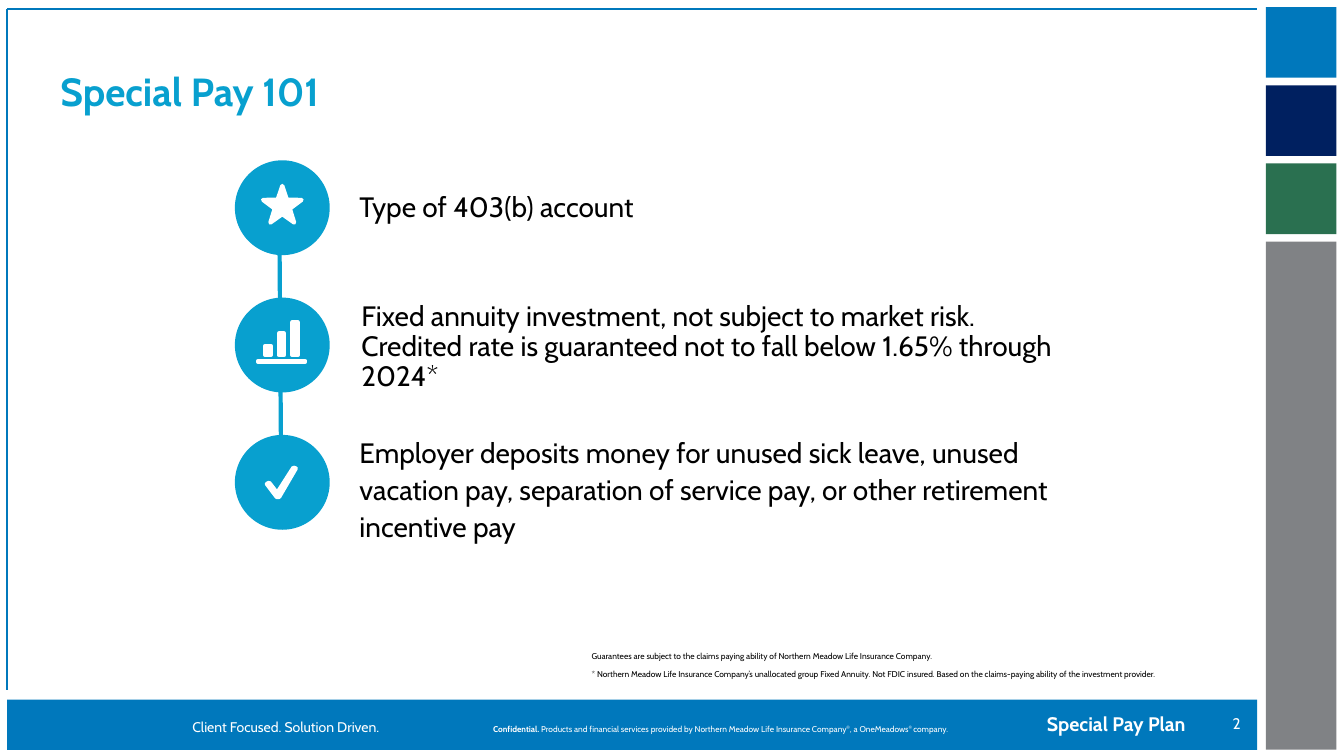
from math import cos, pi, sin

from lxml.etree import SubElement
from pptx import Presentation
from pptx.dml.color import RGBColor
from pptx.enum.shapes import MSO_CONNECTOR, MSO_SHAPE
from pptx.enum.text import MSO_ANCHOR, PP_ALIGN
from pptx.oxml.ns import qn
from pptx.util import Cm, Pt

COLORS = {
    "blue": "0078BC",
    "navy": "002060",
    "green": "2A7050",
    "gray": "808285",
    "cyan": "08A0CF",
    "white": "FFFFFF",
    "black": "000000",
}


class SlideBuilder:
    font_name = "Cabin"

    def __init__(self, slide):
        self.slide = slide

    def color(self, name):
        return RGBColor.from_string(COLORS[name])

    def block(self, preset, left, top, width, height, color):
        shape = self.slide.shapes.add_shape(preset, Cm(left), Cm(top), Cm(width), Cm(height))
        shape.shadow.inherit = False
        shape.fill.solid()
        shape.fill.fore_color.rgb = self.color(color)
        shape.line.fill.background()

    def line(self, start, end, color, width):
        connector = self.slide.shapes.add_connector(
            MSO_CONNECTOR.STRAIGHT, *(Cm(value) for value in start + end))
        connector.line.color.rgb = self.color(color)
        connector.line.width = Pt(width)
        SubElement(connector._element.spPr, qn("a:effectLst"))

    def icon(self, center, contours):
        outlines = [[(Cm(center[0] + x), Cm(center[1] + y)) for x, y in contour]
                    for contour in contours]
        builder = self.slide.shapes.build_freeform(*outlines[0][0])
        builder.add_line_segments(outlines[0][1:])
        for outline in outlines[1:]:
            builder.move_to(*outline[0])
            builder.add_line_segments(outline[1:])
        shape = builder.convert_to_shape()
        shape.shadow.inherit = False
        shape.fill.solid()
        shape.fill.fore_color.rgb = self.color("white")
        shape.line.color.rgb = self.color("white")
        shape.line.width = Pt(3)
        SubElement(shape.line._get_or_add_ln(), qn("a:round"))

    def fill_text(self, shape, paragraphs, size, color, bold=False, align=PP_ALIGN.LEFT,
                  anchor=MSO_ANCHOR.TOP, spacing=1.0, gap=0):
        frame = shape.text_frame
        frame.word_wrap = True
        frame.vertical_anchor = anchor
        for index, runs in enumerate(paragraphs):
            paragraph = frame.add_paragraph() if index else frame.paragraphs[0]
            paragraph.alignment = align
            paragraph.line_spacing = spacing
            paragraph.space_before = Pt(gap if index else 0)
            for text, style in runs:
                run = paragraph.add_run()
                run.text = text
                run.font.name = self.font_name
                run.font.size = Pt(size)
                run.font.bold = bold or style == "bold"
                run.font.color.rgb = self.color(color)
                if style == "superscript":
                    run._r.get_or_add_rPr().set("baseline", "30000")

    def text(self, left, top, width, height, paragraphs, size, color, **options):
        shape = self.slide.shapes.add_textbox(Cm(left), Cm(top), Cm(width), Cm(height))
        self.fill_text(shape, paragraphs, size, color, **options)

    def title(self, left, top, width, height, text):
        shape = self.slide.shapes.title
        shape.left, shape.top, shape.width, shape.height = (
            Cm(left), Cm(top), Cm(width), Cm(height))
        self.fill_text(shape, [[(text, "")]], 28, "cyan", bold=True,
                       anchor=MSO_ANCHOR.BOTTOM, spacing=0.9)


def rectangle(left, top, right, bottom):
    return [(left, top), (right, top), (right, bottom), (left, bottom), (left, top)]


def star():
    radii = (0.51, 0.2)
    return [(radii[step % 2] * sin(step * pi / 5),
             -0.04 - radii[step % 2] * cos(step * pi / 5)) for step in range(11)]


def bar_chart():
    bars = [rectangle(-0.43 + 0.34 * index, top, -0.29 + 0.34 * index, 0.25)
            for index, top in enumerate((0.02, -0.29, -0.57))]
    return [rectangle(-0.61, 0.4, 0.58, 0.42)] + bars


def check_mark():
    return [(-0.39, 0.04), (-0.33, 0.01), (-0.13, 0.27), (0.28, -0.37),
            (0.34, -0.35), (-0.08, 0.37), (-0.14, 0.37), (-0.39, 0.04)]


def add_frame(builder):
    builder.block(MSO_SHAPE.RECTANGLE, 0.18, 17.63, 31.5, 1.27, "blue")
    tiles = (("blue", 1.78), ("navy", 1.78), ("green", 1.78), ("gray", 12.8))
    for index, (color, height) in enumerate(tiles):
        builder.block(MSO_SHAPE.RECTANGLE, 31.9, 0.18 + 1.97 * index, 1.78, height, color)
    builder.line((0.18, 0.23), (31.67, 0.23), "blue", 1)
    builder.line((0.18, 0.23), (0.18, 17.4), "blue", 1)


def add_footer(builder):
    builder.text(4.6, 17.98, 5.87, 0.69, [[("Client Focused. Solution Driven.", "")]], 10, "white")
    builder.text(14.1, 17.81, 16.03, 0.86, [[("Special Pay Plan", "")]], 14, "white",
                 bold=True, align=PP_ALIGN.RIGHT, anchor=MSO_ANCHOR.MIDDLE)
    confidential = [
        ("Confidential. ", "bold"),
        ("Products and financial services provided by Northern Meadow Life Insurance Company", ""),
        ("®", "superscript"),
        (", a OneMeadows", ""),
        ("® ", "superscript"),
        ("company.", ""),
    ]
    builder.text(11.53, 18.11, 13.26, 0.51, [confidential], 6, "white", align=PP_ALIGN.CENTER)
    builder.text(30, 17.73, 1.52, 1.02, [[("2", "")]], 11, "white",
                 align=PP_ALIGN.RIGHT, anchor=MSO_ANCHOR.MIDDLE)


def add_facts(builder):
    facts = (
        (star(), (8.81, 4.75, 13.79, 0.94), 0.9, "Type of 403(b) account"),
        (bar_chart(), (8.86, 7.49, 18.59, 2.39), 0.9,
         "Fixed annuity investment, not subject to market risk. "
         "Credited rate is guaranteed not to fall below 1.65% through 2024*"),
        (check_mark(), (8.81, 10.77, 18.64, 2.95), 1.1,
         "Employer deposits money for unused sick leave, unused vacation pay, "
         "separation of service pay, or other retirement incentive pay"),
    )
    diameter = 2.39
    builder.line((7.04, 5.56), (7.09, 12.6), "cyan", 3)
    for index, (symbol, box, spacing, text) in enumerate(facts):
        top = 4.04 + 3.46 * index
        builder.block(MSO_SHAPE.OVAL, 5.92, top, diameter, diameter, "cyan")
        contours = symbol if index == 1 else [symbol]
        builder.icon((5.92 + diameter / 2, top + diameter / 2), contours)
        builder.text(*box, [[(text, "")]], 20, "black", spacing=spacing)


def main():
    presentation = Presentation()
    presentation.slide_width, presentation.slide_height = Cm(33.87), Cm(19.05)
    builder = SlideBuilder(presentation.slides.add_slide(presentation.slide_layouts[5]))
    add_frame(builder)
    builder.title(1.27, 0.99, 29.21, 2.03, "Special Pay 101")
    add_facts(builder)
    footnotes = (
        "Guarantees are subject to the claims paying ability of "
        "Northern Meadow Life Insurance Company.",
        "* Northern Meadow Life Insurance Company’s unallocated group Fixed Annuity. "
        "Not FDIC insured. Based on the claims-paying ability of the investment provider.",
    )
    builder.text(14.66, 16.28, 16.92, 0.99, [[(note, "")] for note in footnotes],
                 6, "black", gap=6)
    add_footer(builder)
    presentation.save("out.pptx")


if __name__ == "__main__":
    main()
